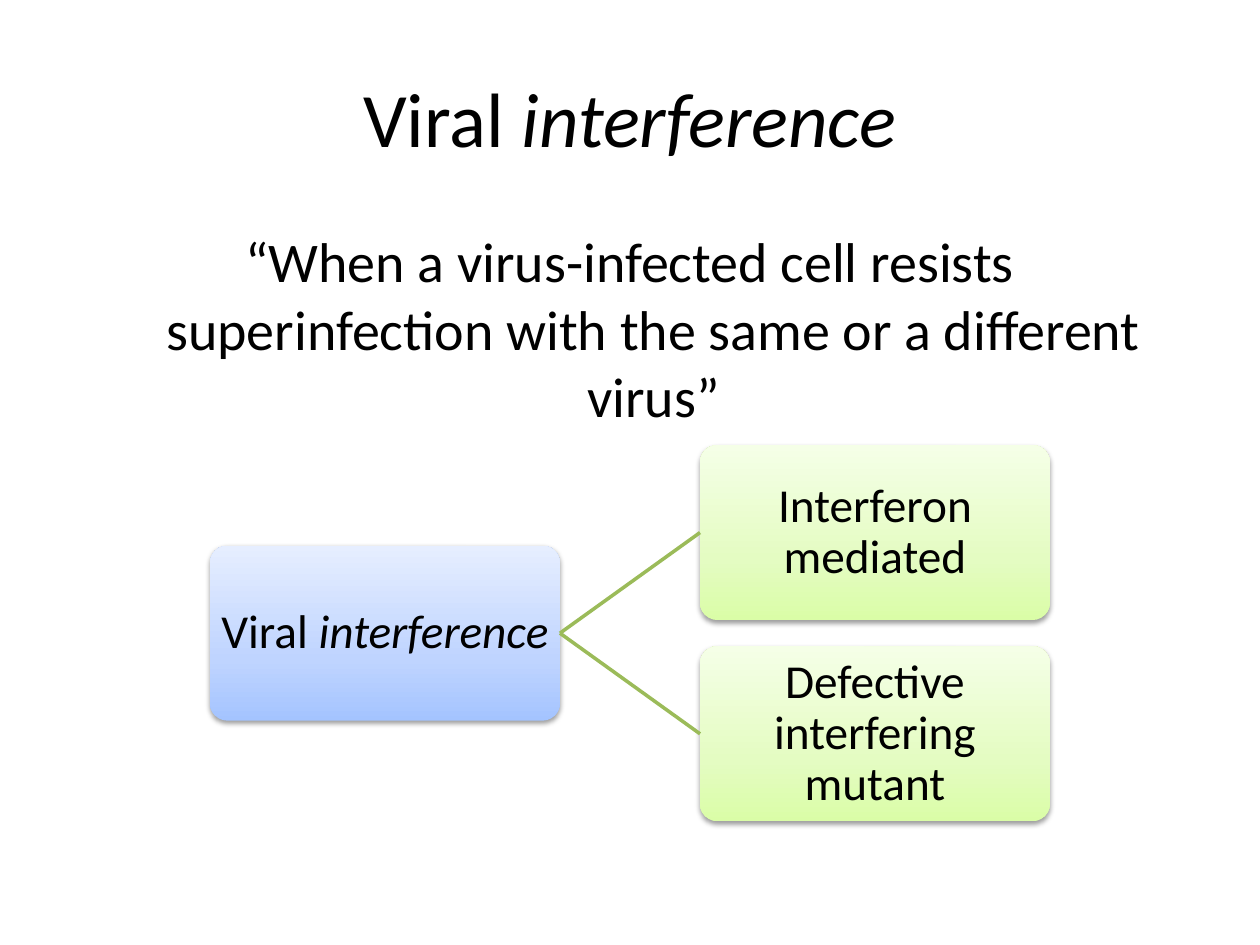
from copy import deepcopy
from dataclasses import dataclass

from lxml import etree
from pptx import Presentation
from pptx import util as u
from pptx.dml.color import RGBColor
from pptx.enum import shapes, text
from pptx.oxml.ns import qn


@dataclass(frozen=True)
class Theme:
    font: str = "Calibri"
    ink: str = "000000"
    edge: str = "9BBB59"
    blue: tuple = ("A4C4FF", "BFD4FF", "E6EEFF")
    green: tuple = ("DAFDA7", "E4FCC2", "F5FFE7")
    head: int = 44
    body: int = 32
    node: int = 27


LOOK = Theme()
STOPS = (0, 0.35, 1)
WIDE, HIGH = u.Inches(10), u.Inches(7.5)

# Tree grid: a column step is 1.4 node widths, a row step 0.575 node heights
NODE_W, NODE_H = WIDE * 5 / 18, HIGH * 5 / 27
LEFT, TOP = WIDE / 6, HIGH * 0.471
COL, ROW = NODE_W * 1.4, NODE_H * 0.575


def apply(item, **form):
    for key, value in form.items():
        setattr(item, key, value)


def write(frame, parts, size):
    """Fill a frame with one centred paragraph of (words, italic) parts."""
    para = frame.paragraphs[0]
    para.alignment = text.PP_ALIGN.CENTER
    for words, slant in parts:
        run = para.add_run()
        run.text = words
        apply(run.font, name=LOOK.font, size=u.Pt(size), italic=slant)
        run.font.color.rgb = RGBColor.from_string(LOOK.ink)
    return para


def shade(shape, tones):
    """Three-stop gradient that runs from the bottom up."""
    fill = shape.fill
    fill.gradient()
    fill.gradient_angle = 90
    stops = shape._element.spPr.find(".//" + qn("a:gsLst"))
    stops.append(deepcopy(stops[-1]))
    for stop, place, tone in zip(fill.gradient_stops, STOPS, tones):
        stop.position = place
        stop.color.rgb = RGBColor.from_string(tone)


def drop(shape):
    """Soft shadow straight below the shape."""
    shape.shadow.inherit = False
    hold = shape._element.spPr.find(qn("a:effectLst"))
    cast = etree.SubElement(hold, qn("a:outerShdw"), blurRad=str(u.Pt(3.1)),
                            dist=str(u.Pt(1.6)), dir="5400000", rotWithShape="0")
    tone = etree.SubElement(cast, qn("a:srgbClr"), val=LOOK.ink)
    etree.SubElement(tone, qn("a:alpha"), val="38000")


def node(slide, col, row, parts, tones):
    box = slide.shapes.add_shape(
        shapes.MSO_SHAPE.ROUNDED_RECTANGLE, int(LEFT + col * COL),
        int(TOP + row * ROW), int(NODE_W), int(NODE_H))
    box.adjustments[0] = 0.1
    shade(box, tones)
    box.line.fill.background()
    drop(box)
    pad = u.Inches(0.02)
    apply(box.text_frame, word_wrap=True, vertical_anchor=text.MSO_ANCHOR.MIDDLE,
          margin_left=pad, margin_right=pad, margin_top=pad, margin_bottom=pad)
    write(box.text_frame, parts, LOOK.node).line_spacing = 0.9
    return box


def link(slide, start, end):
    line = slide.shapes.add_connector(shapes.MSO_CONNECTOR.STRAIGHT, 0, 0, 0, 0)
    line.begin_connect(start, 3)
    line.end_connect(end, 1)
    line.line.width = u.Pt(2)
    line.line.color.rgb = RGBColor.from_string(LOOK.edge)
    etree.SubElement(line._element.spPr, qn("a:effectLst"))


def main():
    deck = Presentation()
    apply(deck, slide_width=WIDE, slide_height=HIGH)
    slide = deck.slides.add_slide(deck.slide_layouts[1])
    name = [("Viral ", False), ("interference", True)]

    # Title and quotation
    title, body = slide.placeholders
    side, span = int(WIDE * 0.05), int(WIDE * 0.9)
    apply(title, left=side, top=int(HIGH * 0.04), width=span, height=int(HIGH / 6))
    apply(body, left=side, top=int(HIGH * 7 / 30), width=span, height=int(HIGH * 0.66))
    write(title.text_frame, name, LOOK.head)
    quote = write(body.text_frame, [(
        "“When a virus-infected cell resists superinfection "
        "with the same or a different virus”", False)], LOOK.body)
    etree.SubElement(quote._p.get_or_add_pPr(), qn("a:buNone"))

    # Tree of mechanisms
    root = node(slide, 0, 1, name, LOOK.blue)
    for row, words in ((0, "Interferon mediated"),
                       (2, "Defective interfering mutant")):
        leaf = node(slide, 1, row, [(words, False)], LOOK.green)
        link(slide, root, leaf)

    deck.save("out.pptx")


if __name__ == "__main__":
    main()
